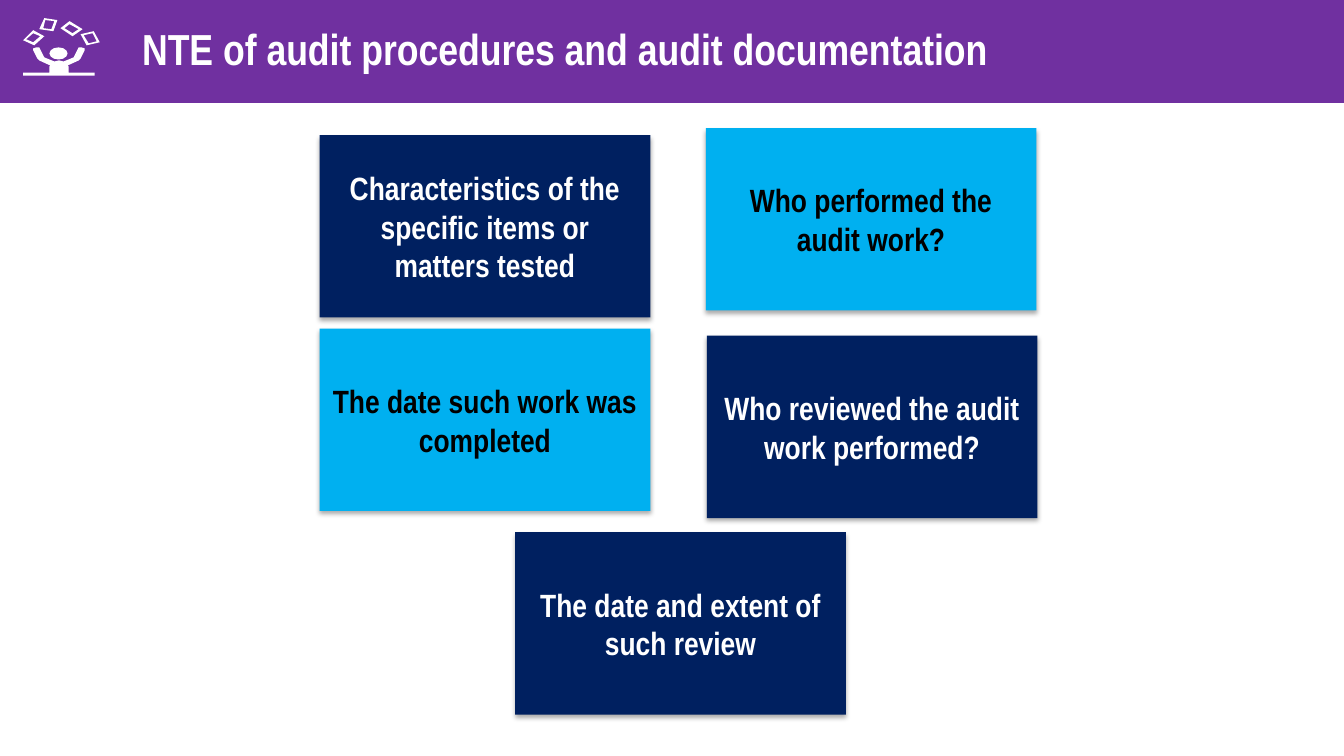
"""Build the slide on audit procedures and audit documentation."""
from lxml import etree
from pptx import Presentation, util as u
from pptx.dml.color import RGBColor
from pptx.enum import shapes, text
from pptx.oxml.ns import qn

TITLE = "NTE of audit procedures and audit documentation"
CARDS = [
    (3.17, 1.34, "navy", "white", "Characteristics of the specific items or matters tested"),
    (7.00, 1.27, "sky", "black", "Who performed the audit work?"),
    (3.17, 3.26, "sky", "black", "The date such work was completed"),
    (7.01, 3.33, "navy", "white", "Who reviewed the audit work performed?"),
    (5.11, 5.28, "navy", "white", "The date and extent of such review"),
]
CARD_SIZE = (3.28, 1.81)
PAPERS = [
    [(0.33, 0.30), (0.44, 0.36), (0.34, 0.45), (0.23, 0.40)],
    [(0.33, 0.33), (0.26, 0.39), (0.33, 0.42), (0.40, 0.36)],
    [(0.69, 0.21), (0.60, 0.28), (0.72, 0.36), (0.82, 0.29)],
    [(0.69, 0.24), (0.78, 0.29), (0.72, 0.33), (0.64, 0.28)],
    [(0.57, 0.20), (0.44, 0.18), (0.39, 0.29), (0.53, 0.31)],
    [(0.54, 0.21), (0.51, 0.29), (0.43, 0.28), (0.45, 0.20)],
    [(0.93, 0.31), (0.99, 0.42), (0.86, 0.45), (0.80, 0.34)],
    [(0.92, 0.33), (0.83, 0.35), (0.88, 0.43), (0.96, 0.41)],
]
HEAD = (0.49, 0.47, 0.18, 0.12)
HALF_BODY = [
    (0.58, 0.60), (0.54, 0.61), (0.44, 0.57), (0.40, 0.49), (0.39, 0.47),
    (0.36, 0.47), (0.33, 0.48), (0.33, 0.50), (0.37, 0.58), (0.39, 0.60),
    (0.50, 0.65), (0.49, 0.66), (0.49, 0.72), (0.23, 0.72), (0.23, 0.75),
]
BODY_WIDTH_SUM = 1.17
THEME = {
    "font": "Arial Narrow", "title": 31, "card": 23,
    "purple": "7030A0", "navy": "002060", "sky": "00B0F0",
    "white": "FFFFFF", "black": "000000",
}


def color(name):
    return RGBColor.from_string(THEME[name])


def paint(sp, fill):
    sp.shadow.inherit = False
    sp.fill.solid()
    sp.fill.fore_color.rgb = color(fill)
    sp.line.fill.background()
    return sp


def add_preset(s, kind, box, fill):
    return paint(s.shapes.add_shape(kind, *map(u.Inches, box)), fill)


def add_outline(s, contours, fill):
    contours = [[(u.Inches(x), u.Inches(y)) for x, y in c] for c in contours]
    builder = s.shapes.build_freeform(*contours[0][0])
    for i, points in enumerate(contours):
        if i:
            builder.move_to(*points[0])
        builder.add_line_segments(points[1:], close=True)
    return paint(builder.convert_to_shape(), fill)


def write(sp, words, size, ink, align):
    tf = sp.text_frame
    tf.word_wrap = True
    tf.vertical_anchor = text.MSO_ANCHOR.MIDDLE
    tf.margin_left = tf.margin_right = tf.margin_top = tf.margin_bottom = u.Inches(0.1)
    p = tf.paragraphs[0]
    p.text = words
    p.alignment = align
    p.font.name = THEME["font"]
    p.font.size = u.Pt(THEME[size])
    p.font.bold = True
    p.font.color.rgb = color(ink)
    return tf


def add_shadow(sp):
    effects = sp._element.spPr.find(qn("a:effectLst"))
    shadow = etree.SubElement(effects, qn("a:outerShdw"), blurRad=str(u.Pt(3.5)),
                              dist=str(u.Pt(2.2)), dir="5400000", rotWithShape="0")
    ink = etree.SubElement(shadow, qn("a:srgbClr"), val=THEME["black"])
    etree.SubElement(ink, qn("a:alpha"), val="32000")


def main():
    prs = Presentation()
    prs.slide_width, prs.slide_height = u.Inches(13.33), u.Inches(7.5)
    s = prs.slides.add_slide(prs.slide_layouts[6])
    rect = shapes.MSO_SHAPE.RECTANGLE

    banner = add_preset(s, rect, (-0.04, -0.08, 13.37, 1.11), "purple")
    banner.line.color.rgb = color("white")
    banner.line.width = u.Pt(0.5)
    tf = write(banner, TITLE, "title", "white", text.PP_ALIGN.LEFT)
    tf.margin_left = u.Inches(1.45)

    mirrored = [(BODY_WIDTH_SUM - x, y) for x, y in reversed(HALF_BODY)]
    add_outline(s, PAPERS, "white")
    add_preset(s, shapes.MSO_SHAPE.OVAL, HEAD, "white")
    add_outline(s, [HALF_BODY + mirrored], "white")

    for left, top, fill, ink, words in CARDS:
        card = add_preset(s, rect, (left, top, *CARD_SIZE), fill)
        add_shadow(card)
        write(card, words, "card", ink, text.PP_ALIGN.CENTER)

    prs.save("out.pptx")


if __name__ == "__main__":
    main()
